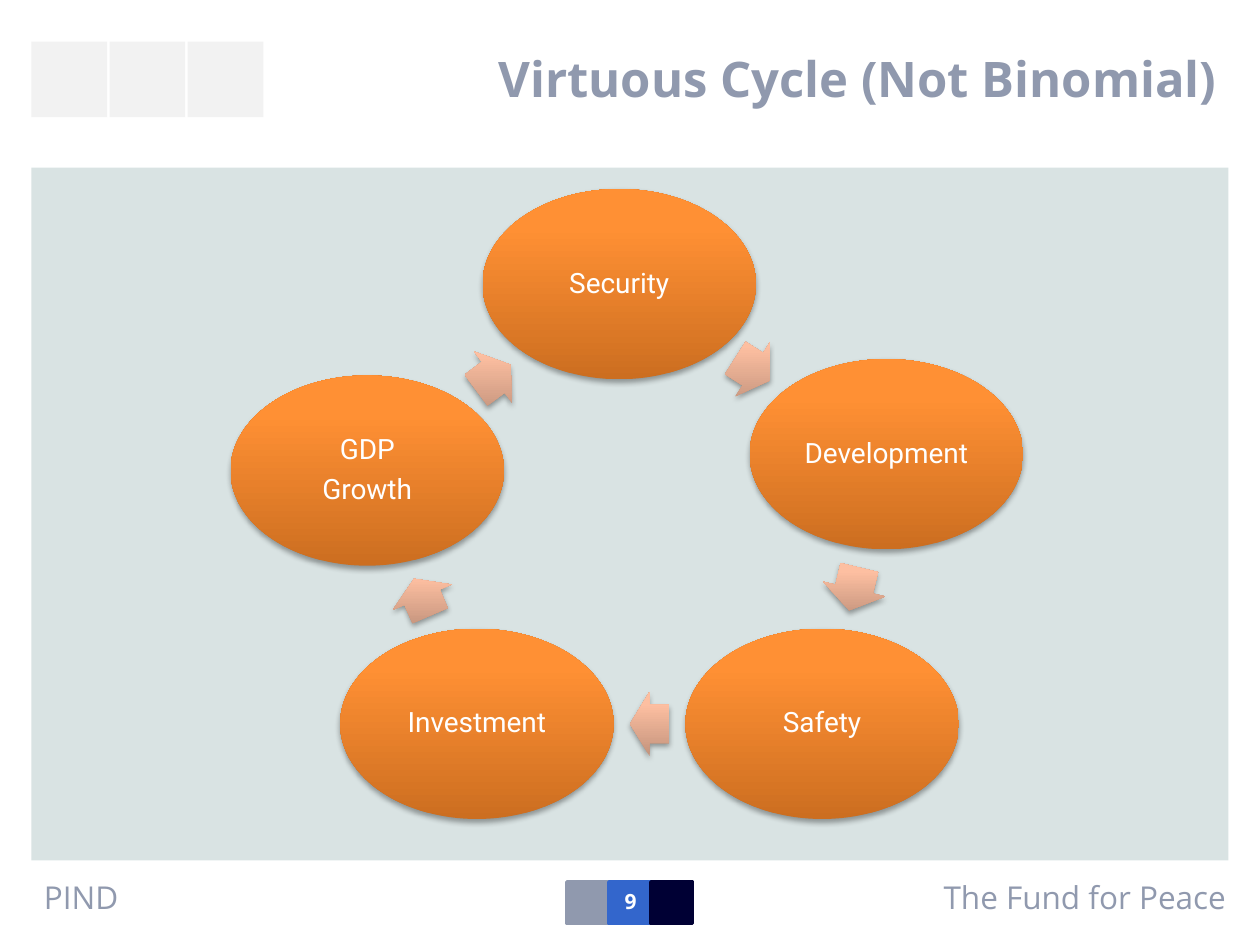
from math import atan2, degrees

from lxml import etree
from pptx import Presentation
from pptx.dml.color import RGBColor
from pptx.enum.shapes import MSO_SHAPE as SHAPE
from pptx.enum.text import MSO_ANCHOR as ANCHOR, PP_ALIGN as ALIGN
from pptx.oxml import parse_xml
from pptx.util import Inches, Pt

TITLE = "Virtuous Cycle (Not Binomial)"
# label lines, left and top of the ellipse, length of the arrow to the next stage
STAGES = [
    (["Security"], 3.83, 1.5, 0.33),
    (["Development"], 5.95, 2.85, 0.35),
    (["Safety"], 5.44, 4.99, 0.31),
    (["Investment"], 2.7, 4.99, 0.32),
    (["GDP", "Growth"], 1.83, 2.98, 0.34),
]
STAGE_WIDTH, STAGE_HEIGHT, ARROW_HEIGHT = 2.17, 1.51, 0.51
STAGE_GRADIENT = [(0, "CC6E20"), (80, "FF9034"), (100, "FF9136")]
ARROW_GRADIENT = [(0, "C3937C"), (80, "FDBFA1"), (100, "FFBFA1")]
FOOTERS = [("The Fund for Peace", 7, ALIGN.RIGHT), ("PIND", 0.25, ALIGN.LEFT)]
PAGE_NUMBER = "9"
PAGE_COLORS = ["9099AE", "3366CC", "000034"]
MUTED, WHITE, PANEL, SQUARE = "9099AE", "FFFFFF", "D9E3E3", "F2F2F2"
A = "http://schemas.openxmlformats.org/drawingml/2006/main"


def rgb(color):
    return RGBColor.from_string(color)


def place(shape, left, top, width, height):
    shape.left, shape.top = Inches(left), Inches(top)
    shape.width, shape.height = Inches(width), Inches(height)


def add_shape(kind, left, top, width, height):
    shape = slide.shapes.add_shape(
        kind, Inches(left), Inches(top), Inches(width), Inches(height))
    shape.shadow.inherit = False
    shape.line.fill.background()
    return shape


def add_rectangle(left, top, width, height, color):
    rectangle = add_shape(SHAPE.RECTANGLE, left, top, width, height)
    rectangle.fill.solid()
    rectangle.fill.fore_color.rgb = rgb(color)
    return rectangle


def write(shape, lines, font_name, size, color, align, bold=False):
    frame = shape.text_frame
    frame.word_wrap = True
    frame.text = "\n".join(lines)
    for paragraph in frame.paragraphs:
        paragraph.alignment = align
        font = paragraph.font
        font.name, font.size, font.bold = font_name, Pt(size), bold
        font.color.rgb = rgb(color)
    return frame


def add_label(text, left, top, width, size, color, align, bold=False):
    box = slide.shapes.add_textbox(
        Inches(left), Inches(top), Inches(width), Inches(0.4))
    return write(box, [text], "Open Sans", size, color, align, bold)


def shade(shape, gradient):
    """Give a vertical three-stop gradient and a soft shadow below."""
    stops = "".join(
        f'<a:gs pos="{position * 1000}"><a:srgbClr val="{color}"/></a:gs>'
        for position, color in gradient)
    fill = parse_xml(
        f'<a:gradFill xmlns:a="{A}" rotWithShape="0"><a:gsLst>{stops}</a:gsLst>'
        '<a:lin ang="16200000" scaled="0"/></a:gradFill>')
    properties = shape._element.spPr
    properties.find(f"{{{A}}}prstGeom").addnext(fill)
    shadow = etree.SubElement(
        properties.find(f"{{{A}}}effectLst"), f"{{{A}}}outerShdw",
        blurRad="39400", dist="22900", dir="5400000", rotWithShape="0")
    black = etree.SubElement(shadow, f"{{{A}}}srgbClr", val="000000")
    etree.SubElement(black, f"{{{A}}}alpha", val="35000")


def add_stage(lines, left, top):
    ellipse = add_shape(SHAPE.OVAL, left, top, STAGE_WIDTH, STAGE_HEIGHT)
    shade(ellipse, STAGE_GRADIENT)
    frame = write(ellipse, lines, "Roboto", 16, WHITE, ALIGN.CENTER)
    frame.vertical_anchor = ANCHOR.MIDDLE
    frame.margin_left = frame.margin_right = Inches(0.02)
    frame.margin_top = frame.margin_bottom = Inches(0.02)
    for paragraph in frame.paragraphs:
        paragraph.line_spacing = 0.9
        paragraph.space_after = Pt(5.6)


def add_arrow(start, end, length):
    """Centre an arrow between two stages, pointing at the second."""
    (x1, y1), (x2, y2) = start, end
    left = (x1 + x2 + STAGE_WIDTH - length) / 2
    top = (y1 + y2 + STAGE_HEIGHT - ARROW_HEIGHT) / 2
    arrow = add_shape(SHAPE.RIGHT_ARROW, left, top, length, ARROW_HEIGHT)
    arrow.adjustments[0], arrow.adjustments[1] = 0.6, 0.5
    arrow.rotation = degrees(atan2(y2 - y1, x2 - x1)) % 360
    shade(arrow, ARROW_GRADIENT)


prs = Presentation()
prs.slide_width, prs.slide_height = Inches(10), Inches(7.5)
slide = prs.slides.add_slide(prs.slide_layouts[5])

title = slide.shapes.title
place(title, 2.17, 0.08, 7.58, 1.08)
write(title, [TITLE], "Open Sans", 28, MUTED, ALIGN.RIGHT, True)
title.text_frame.vertical_anchor = ANCHOR.MIDDLE

for index, color in enumerate(PAGE_COLORS):
    tile = add_rectangle(4.5 + index / 3, 7, 0.33, 0.33, color)
    tile.line.color.rgb = rgb(color)
    tile.line.width = Pt(2)
for index in range(3):
    add_rectangle(0.25 + index * 0.62, 0.33, 0.6, 0.6, SQUARE)
for text, left, align in FOOTERS:
    add_label(text, left, 6.92, 2.83, 18, MUTED, align)
add_rectangle(0.25, 1.33, 9.5, 5.5, PANEL)

for index, (lines, left, top, arrow_length) in enumerate(STAGES):
    following = STAGES[(index + 1) % len(STAGES)]
    add_stage(lines, left, top)
    add_arrow((left, top), following[1:3], arrow_length)

number = add_label(PAGE_NUMBER, 3.42, 6.95, 3.17, 12, WHITE, ALIGN.CENTER, True)
number.vertical_anchor = ANCHOR.MIDDLE

prs.save("out.pptx")
